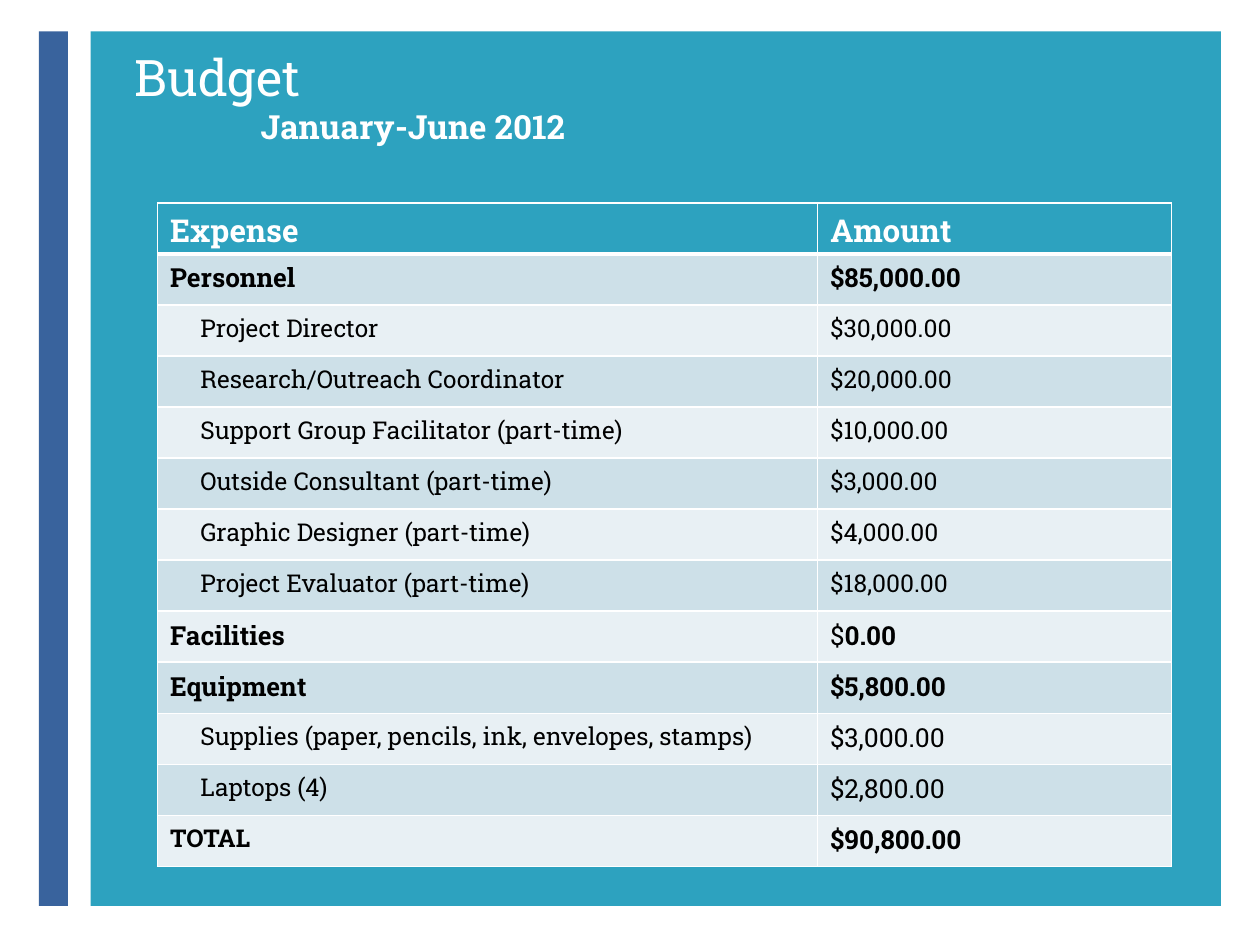
from lxml.etree import SubElement
from pptx import Presentation
from pptx.dml.color import RGBColor
from pptx.enum.shapes import MSO_SHAPE
from pptx.enum.text import MSO_ANCHOR
from pptx.oxml.ns import qn
from pptx.util import Inches, Pt

FONT = "Roboto Slab"
WHITE = RGBColor(0xFF, 0xFF, 0xFF)
BLACK = RGBColor(0x00, 0x00, 0x00)
TEAL = RGBColor(0x2D, 0xA2, 0xBF)
BLUE = RGBColor(0x39, 0x63, 0x9D)
BANDS = (RGBColor(0xE8, 0xF0, 0xF4), RGBColor(0xCD, 0xE0, 0xE8))

COLUMN_WIDTHS = (5.24, 2.81)
ROW_HEIGHT = 5.27 / 13
ITEM_INDENT = 0.24
HEADINGS = ("Expense", "Amount")
SECTION, ITEM, SUPPLY, TOTAL = (15, 15, True), (14, 14, False), (14, 15, False), (14, 15, True)
BUDGET = (
    ("Personnel", "$85,000.00", SECTION),
    ("Project Director", "$30,000.00", ITEM),
    ("Research/Outreach Coordinator", "$20,000.00", ITEM),
    ("Support Group Facilitator (part-time)", "$10,000.00", ITEM),
    ("Outside Consultant (part-time)", "$3,000.00", ITEM),
    ("Graphic Designer (part-time)", "$4,000.00", ITEM),
    ("Project Evaluator (part-time)", "$18,000.00", ITEM),
    ("Facilities", "$0.00", SECTION),
    ("Equipment", "$5,800.00", SECTION),
    ("Supplies (paper, pencils, ink, envelopes, stamps)", "$3,000.00", SUPPLY),
    ("Laptops (4)", "$2,800.00", SUPPLY),
    ("TOTAL", "$90,800.00", TOTAL),
)


def write_text(paragraph, text, size, color=BLACK, bold=False, indent=0):
    """Append a formatted run to a paragraph and return the run."""
    run = paragraph.add_run()
    run.text = text
    run.font.name = FONT
    run.font.size = Pt(size)
    run.font.bold = bold
    run.font.color.rgb = color
    if indent:
        properties = paragraph._p.get_or_add_pPr()
        properties.set("marL", str(Inches(indent)))
        properties.set("indent", "0")
    return run


def add_panel(slide, left, width, color):
    """Add a full-height plain rectangle."""
    shape = slide.shapes.add_shape(
        MSO_SHAPE.RECTANGLE, Inches(left), Inches(0.25), Inches(width), Inches(6.94))
    shape.shadow.inherit = False
    shape.fill.solid()
    shape.fill.fore_color.rgb = color
    shape.line.fill.background()


def add_title(slide):
    """Add the title with its indented period line."""
    box = slide.shapes.add_textbox(Inches(0.97), Inches(0.29), Inches(6.17), Inches(0.92))
    frame = box.text_frame
    frame.word_wrap = True
    frame.vertical_anchor = MSO_ANCHOR.BOTTOM
    write_text(frame.paragraphs[0], "Budget", 28.8, WHITE)
    write_text(frame.add_paragraph(), "January-June 2012", 19, WHITE, bold=True, indent=1)


def style_cell(cell, fill, top=1, bottom=1):
    """Give a cell its fill and white borders."""
    properties = cell._tc.get_or_add_tcPr()
    for side, width in (("L", 1), ("R", 1), ("T", top), ("B", bottom)):
        line = SubElement(properties, qn(f"a:ln{side}"), w=str(Pt(width)))
        color = SubElement(SubElement(line, qn("a:solidFill")), qn("a:srgbClr"))
        color.set("val", str(WHITE))
    cell.fill.solid()
    cell.fill.fore_color.rgb = fill


def add_budget_table(slide):
    """Add the table of expenses and amounts."""
    table = slide.shapes.add_table(
        len(BUDGET) + 1, 2, Inches(1.25), Inches(1.61),
        Inches(sum(COLUMN_WIDTHS)), Inches(5.27)).table
    for column, width in zip(table.columns, COLUMN_WIDTHS):
        column.width = Inches(width)
    for row in table.rows:
        row.height = Inches(ROW_HEIGHT)
    for index, heading in enumerate(HEADINGS):
        cell = table.cell(0, index)
        style_cell(cell, TEAL, bottom=3)
        write_text(cell.text_frame.paragraphs[0], heading, 18, WHITE, bold=True)
    for index, (expense, amount, (expense_size, amount_size, bold)) in enumerate(BUDGET, 1):
        name_cell, amount_cell = table.cell(index, 0), table.cell(index, 1)
        for cell in (name_cell, amount_cell):
            style_cell(cell, BANDS[index % 2], top=3 if index == 1 else 1)
        write_text(name_cell.text_frame.paragraphs[0], expense, expense_size,
                   bold=bold, indent=0 if bold else ITEM_INDENT)
        paragraph = amount_cell.text_frame.paragraphs[0]
        if expense == "Facilities":
            write_text(paragraph, amount[0], amount_size)
            amount = amount[1:]
        write_text(paragraph, amount, amount_size, bold=bold)


def main():
    """Build and save the budget slide."""
    presentation = Presentation()
    presentation.slide_width = Inches(10)
    presentation.slide_height = Inches(7.5)
    slide = presentation.slides.add_slide(presentation.slide_layouts[6])
    add_panel(slide, 0.72, 8.97, TEAL)
    add_panel(slide, 0.31, 0.23, BLUE)
    add_title(slide)
    add_budget_table(slide)
    presentation.save("out.pptx")


if __name__ == "__main__":
    main()
